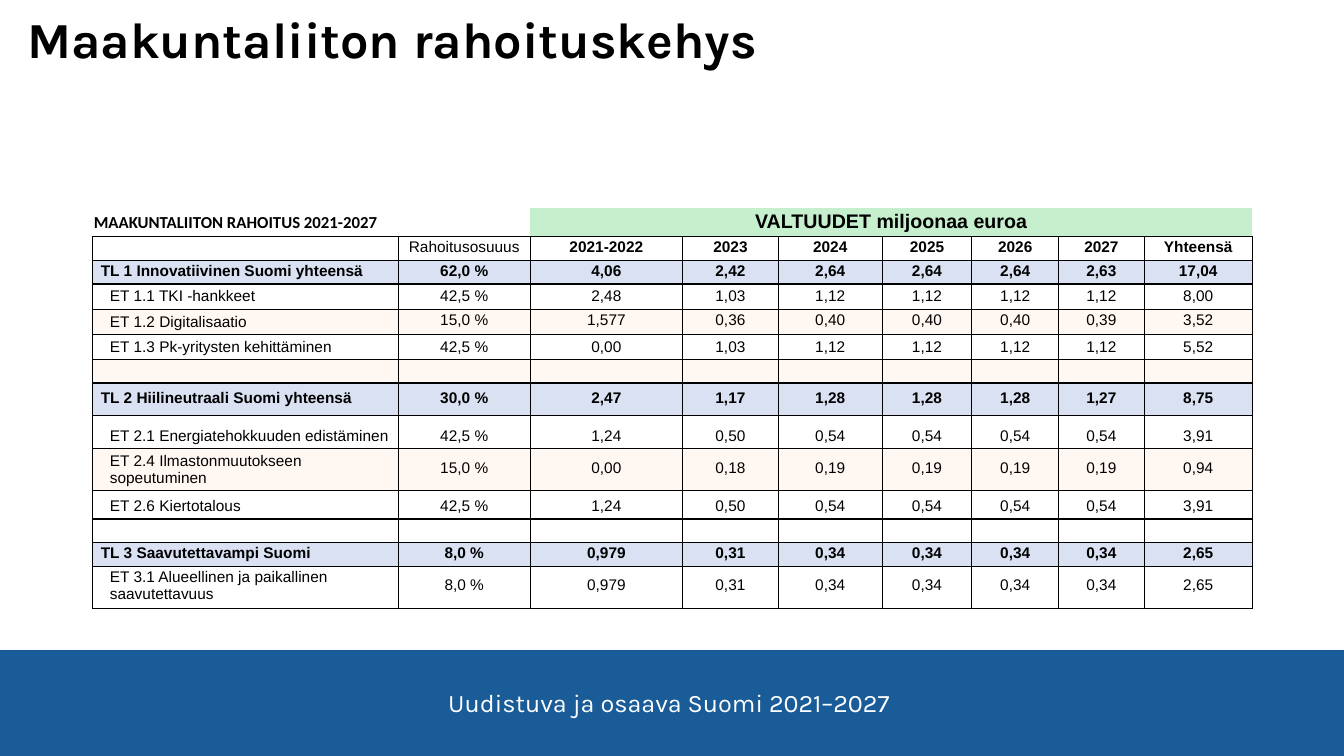
from lxml.etree import SubElement
from pptx import Presentation
from pptx.dml.color import RGBColor
from pptx.enum.shapes import MSO_SHAPE
from pptx.enum.text import MSO_ANCHOR, PP_ALIGN
from pptx.oxml.ns import qn
from pptx.util import Inches, Pt

BLACK = RGBColor(0x00, 0x00, 0x00)
WHITE = RGBColor(0xFF, 0xFF, 0xFF)
FOOTER_BLUE = RGBColor(0x19, 0x5C, 0x98)
HEADING_GREEN = RGBColor(0xC6, 0xEF, 0xCE)
TOTAL_BLUE = RGBColor(0xD9, 0xE1, 0xF2)
TINT = RGBColor(0xFF, 0xF7, 0xF2)
NO_STYLE = "{2D5ABB26-0587-4C30-8999-92F81FD0307C}"
MIDDLE, BOTTOM = MSO_ANCHOR.MIDDLE, MSO_ANCHOR.BOTTOM

COLUMN_WIDTHS = [3.03, 1.31, 1.51, 0.95, 1.03, 0.89, 0.86, 0.85, 1.07]
HEADING_HEIGHT = 0.29

# Row kind: fill, bold, label indent, label anchor, value anchor
ROW_KINDS = {
    "years": (None, True, 0.01, MIDDLE, MIDDLE),
    "total": (TOTAL_BLUE, True, 0.08, MIDDLE, MIDDLE),
    "plain": (None, False, 0.17, BOTTOM, BOTTOM),
    "tinted": (TINT, False, 0.17, BOTTOM, MIDDLE),
    "centred": (None, False, 0.17, MIDDLE, MIDDLE),
}
# Height, kind, cells
FUNDING_ROWS = [
    (0.23, "years", "|Rahoitusosuuus|2021-2022|2023|2024|2025|2026|2027|Yhteensä"),
    (0.23, "total", "TL 1 Innovatiivinen Suomi yhteensä|62,0 %|4,06|2,42|2,64|2,64|2,64|2,63|17,04"),
    (0.25, "plain", "ET 1.1 TKI -hankkeet|42,5 %|2,48|1,03|1,12|1,12|1,12|1,12|8,00"),
    (0.25, "tinted", "ET 1.2 Digitalisaatio|15,0 %|1,577|0,36|0,40|0,40|0,40|0,39|3,52"),
    (0.25, "plain", "ET 1.3 Pk-yritysten kehittäminen|42,5 %|0,00|1,03|1,12|1,12|1,12|1,12|5,52"),
    (0.23, "tinted", "||||||||"),
    (0.32, "total", "TL 2 Hiilineutraali Suomi yhteensä|30,0 %|2,47|1,17|1,28|1,28|1,28|1,27|8,75"),
    (0.33, "plain", "ET 2.1 Energiatehokkuuden edistäminen|42,5 %|1,24|0,50|0,54|0,54|0,54|0,54|3,91"),
    (0.42, "tinted", "ET 2.4 Ilmastonmuutokseen sopeutuminen|15,0 %|0,00|0,18|0,19|0,19|0,19|0,19|0,94"),
    (0.28, "plain", "ET 2.6 Kiertotalous|42,5 %|1,24|0,50|0,54|0,54|0,54|0,54|3,91"),
    (0.23, "plain", "||||||||"),
    (0.23, "total", "TL 3 Saavutettavampi Suomi|8,0 %|0,979|0,31|0,34|0,34|0,34|0,34|2,65"),
    (0.41, "centred", "ET 3.1 Alueellinen ja paikallinen saavutettavuus"
                      "|8,0 %|0,979|0,31|0,34|0,34|0,34|0,34|2,65"),
]


def add_run(paragraph, text, font, size, color, bold=False):
    run = paragraph.add_run()
    run.text = text
    run.font.name, run.font.size, run.font.bold = font, Pt(size), bold
    run.font.color.rgb = color


def add_text_box(slide, left, top, width, height):
    frame = slide.shapes.add_textbox(
        Inches(left), Inches(top), Inches(width), Inches(height)).text_frame
    frame.word_wrap = True
    frame.vertical_anchor = MIDDLE
    return frame.paragraphs[0]


def add_footer(slide, left, top, width, height):
    band = slide.shapes.add_shape(MSO_SHAPE.RECTANGLE, Inches(left), Inches(top),
                                  Inches(width), Inches(height))
    band.shadow.inherit = False
    band.fill.solid()
    band.fill.fore_color.rgb = FOOTER_BLUE
    band.line.fill.background()
    programme = add_text_box(slide, left + 3.01, top + 0.32, 7.31, 0.4)
    programme.alignment = PP_ALIGN.CENTER
    add_run(programme, "Uudistuva ja osaava Suomi 2021–2027 ", "Karla", 18, WHITE)


def add_title(slide, left, top, width, height):
    title = add_text_box(slide, left, top, width, height)
    title.line_spacing = 0.9
    add_run(title, "Maakuntaliiton rahoituskehys", "Karla", 36, BLACK, True)


def draw_borders(cell, sides):
    properties = cell._tc.get_or_add_tcPr()
    for side in sides:
        line = SubElement(properties, qn(f"a:ln{side}"), w=str(Pt(1)))
        solid = SubElement(line, qn("a:solidFill"))
        SubElement(solid, qn("a:srgbClr"), val=str(BLACK))


def fill_cell(cell, text, size, bold, fill, anchor, sides="LRTB", font="Arial",
              indent=0.01, align=PP_ALIGN.CENTER):
    draw_borders(cell, sides)
    if fill is None:
        cell.fill.background()
    else:
        cell.fill.solid()
        cell.fill.fore_color.rgb = fill
    cell.margin_left = Inches(indent)
    cell.margin_right = cell.margin_top = Inches(0.01)
    cell.margin_bottom = Inches(0.04)
    cell.vertical_anchor = anchor
    paragraph = cell.text_frame.paragraphs[0]
    paragraph.alignment = align
    if text:
        add_run(paragraph, text, font, size, BLACK, bold)
    else:
        # Keeps an empty row from growing to the default text size
        SubElement(paragraph._p, qn("a:endParaRPr"), sz=str(size * 100))


def add_funding_table(slide, left, top, width, height):
    frame = slide.shapes.add_table(len(FUNDING_ROWS) + 1, len(COLUMN_WIDTHS),
                                   Inches(left), Inches(top), Inches(width), Inches(height))
    table = frame.table
    table.first_row = table.horz_banding = False
    table._tbl.tblPr.find(qn("a:tableStyleId")).text = NO_STYLE
    for column, column_width in zip(table.columns, COLUMN_WIDTHS):
        column.width = Inches(column_width)

    # Heading row, with only a line below
    table.rows[0].height = Inches(HEADING_HEIGHT)
    table.cell(0, 2).merge(table.cell(0, 8))
    fill_cell(table.cell(0, 0), "MAAKUNTALIITON RAHOITUS 2021-2027", 12, True, None,
              BOTTOM, "B", "Calibri", align=PP_ALIGN.LEFT)
    fill_cell(table.cell(0, 1), "", 11, False, None, BOTTOM, "B")
    fill_cell(table.cell(0, 2), "VALTUUDET miljoonaa euroa", 14, True, HEADING_GREEN,
              BOTTOM, "B")

    # Years, totals and objectives
    for row, (row_height, kind, cells) in enumerate(FUNDING_ROWS, start=1):
        table.rows[row].height = Inches(row_height)
        fill, bold, indent, label_anchor, value_anchor = ROW_KINDS[kind]
        label, *values = cells.split("|")
        fill_cell(table.cell(row, 0), label, 11, bold, fill, label_anchor,
                  indent=indent, align=PP_ALIGN.LEFT)
        for column, value in enumerate(values, start=1):
            value_bold = bold and value != "Rahoitusosuuus"
            fill_cell(table.cell(row, column), value, 11, value_bold, fill, value_anchor)


def main():
    deck = Presentation()
    deck.slide_width, deck.slide_height = Inches(13.33), Inches(7.5)
    slide = deck.slides.add_slide(deck.slide_layouts[6])
    add_footer(slide, 0, 6.45, 13.33, 1.05)
    add_title(slide, 0.17, 0.11, 11.13, 0.61)
    add_funding_table(slide, 0.92, 2.06, 11.5, 4)
    deck.save("out.pptx")


if __name__ == "__main__":
    main()
